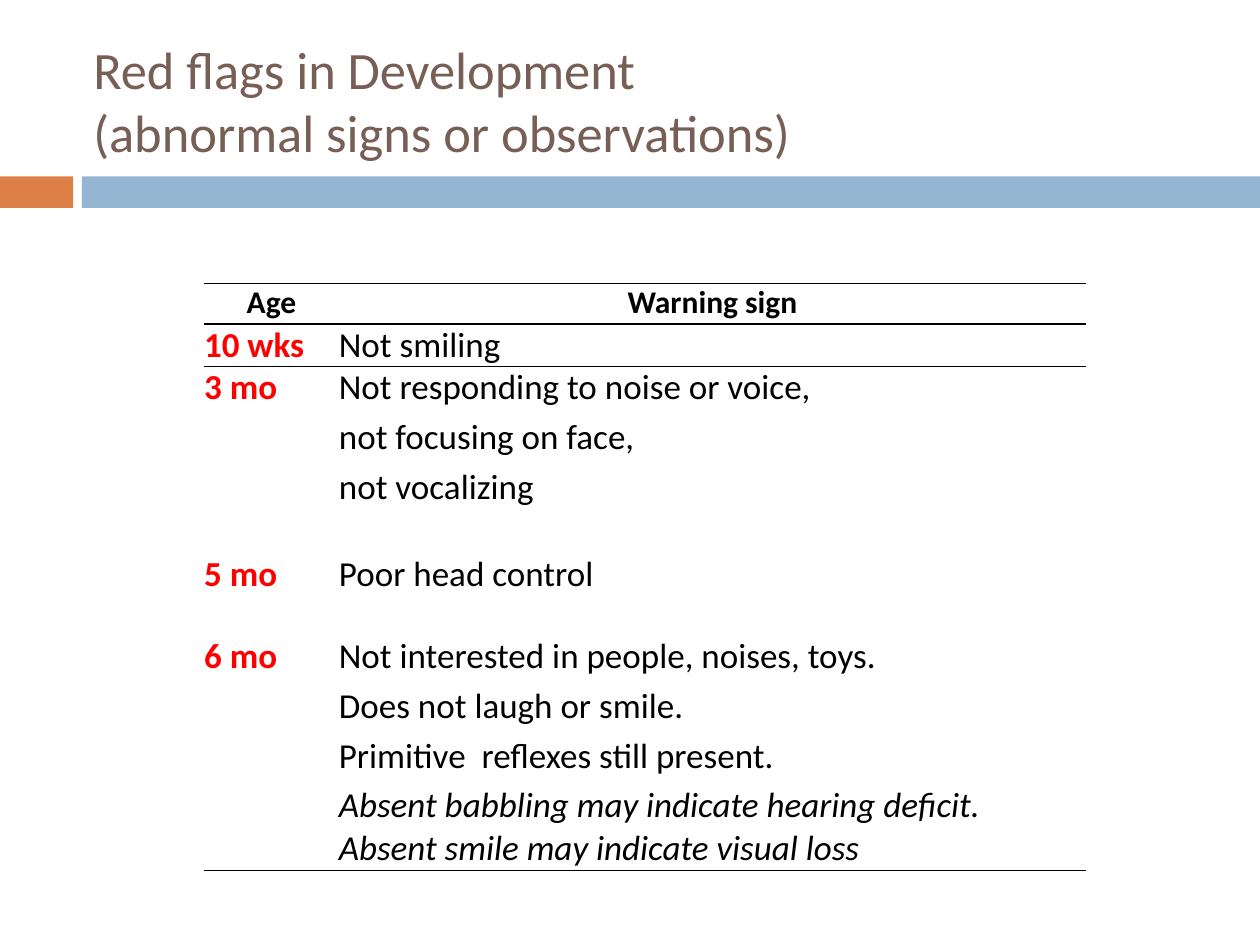
from dataclasses import dataclass

from lxml import etree
from pptx import Presentation
from pptx.dml.color import RGBColor
from pptx.enum.shapes import MSO_SHAPE
from pptx.enum.text import MSO_ANCHOR, PP_ALIGN
from pptx.oxml.ns import qn
from pptx.util import Inches, Pt

RECTANGLE = MSO_SHAPE.RECTANGLE
MIDDLE = MSO_ANCHOR.MIDDLE
CENTER, LEFT = PP_ALIGN.CENTER, PP_ALIGN.LEFT

FONT = "Calibri"
BLACK, RED, BROWN = "000000", "FF0000", "775F55"
NO_GRID_STYLE = "{2D5ABB26-0587-4C30-8999-92F81FD0307C}"


@dataclass
class Band:
    left: float
    width: float
    color: str


@dataclass
class Milestone:
    age: str
    signs: list[str]
    height: float
    note: str = ""


BANDS = [Band(0, 0.58, "DD8047"), Band(0.65, 9.35, "94B6D2")]
HEADINGS = ["Age", "Warning sign"]
HEADER_HEIGHT = 0.32
COLUMN_WIDTHS = [1.07, 5.93]
MILESTONES = [
    Milestone("10 wks", ["Not smiling"], 0.34),
    Milestone("3 mo", ["Not responding to noise or voice,", "not focusing on face,",
                       "not vocalizing"], 1.48),
    Milestone("5 mo", ["Poor head control"], 0.65),
    Milestone("6 mo", ["Not interested in people, noises, toys.",
                       "Does not laugh or smile.",
                       "Primitive  reflexes still present."], 1.87,
              "Absent babbling may indicate hearing deficit. "
              "Absent smile may indicate visual loss"),
]


def rgb(color: str) -> RGBColor:
    return RGBColor.from_string(color)


def style_font(para, size: float, color: str, bold=False, italic=False) -> None:
    font = para.font
    font.name, font.size = FONT, Pt(size)
    font.bold, font.italic = bold, italic
    font.color.rgb = rgb(color)


def draw_band(page, band: Band) -> None:
    bar = page.shapes.add_shape(RECTANGLE, Inches(band.left), Inches(1.4),
                                Inches(band.width), Inches(0.25))
    bar.shadow.inherit = False
    bar.fill.solid()
    bar.fill.fore_color.rgb = rgb(band.color)
    bar.line.fill.background()


def draw_title(page) -> None:
    box = page.shapes.add_textbox(Inches(0.67), Inches(0.25), Inches(8.92), Inches(1.08))
    frame = box.text_frame
    frame.word_wrap = True
    frame.vertical_anchor = MIDDLE
    frame.margin_left = frame.margin_right = Inches(0.07)
    frame.margin_top = frame.margin_bottom = Inches(0.04)
    para = frame.paragraphs[0]
    para.text = "Red flags in Development\v(abnormal signs or observations)"
    style_font(para, 30, BROWN)


def add_rule(cell, edge: str) -> None:
    """Draw a black line on one edge of a cell: lnT or lnB."""
    line = etree.SubElement(cell._tc.get_or_add_tcPr(), qn(f"a:{edge}"), w=str(Pt(1)))
    fill = etree.SubElement(line, qn("a:solidFill"))
    etree.SubElement(fill, qn("a:srgbClr"), val=BLACK)


def fill_cell(cell, lines: list[str], size: float, color: str, bold=False,
              align=LEFT, note="", rules=()) -> None:
    cell.margin_left = cell.margin_right = cell.margin_top = cell.margin_bottom = 0
    for edge in rules:
        add_rule(cell, edge)
    cell.fill.background()
    frame = cell.text_frame
    texts = lines + [note] if note else lines
    for index, text in enumerate(texts):
        para = frame.add_paragraph() if index else frame.paragraphs[0]
        para.text = text
        para.alignment = align
        para.space_before = Pt(0.2 * size if index else 0)
        style_font(para, size, color, bold, italic=bool(note) and text == note)


def draw_table(page) -> None:
    heights = [HEADER_HEIGHT] + [milestone.height for milestone in MILESTONES]
    frame = page.shapes.add_table(len(heights), len(COLUMN_WIDTHS), Inches(1.62), Inches(2.25),
                                  Inches(sum(COLUMN_WIDTHS)), Inches(sum(heights)))
    table = frame.table
    table.first_row = table.horz_banding = False
    table._tbl.tblPr.find(qn("a:tableStyleId")).text = NO_GRID_STYLE
    for column, width in zip(table.columns, COLUMN_WIDTHS):
        column.width = Inches(width)
    for row, height in zip(table.rows, heights):
        row.height = Inches(height)

    for column, heading in enumerate(HEADINGS):
        fill_cell(table.cell(0, column), [heading], 18, BLACK, bold=True,
                  align=CENTER, rules=["lnT", "lnB"])
    for row, milestone in enumerate(MILESTONES, start=1):
        rules = ["lnT"] if row == 1 else ["lnB"] if row == len(MILESTONES) else []
        fill_cell(table.cell(row, 0), [milestone.age], 20, RED, bold=True, rules=rules)
        fill_cell(table.cell(row, 1), milestone.signs, 20, BLACK,
                  note=milestone.note, rules=rules)


def main() -> None:
    deck = Presentation()
    deck.slide_width, deck.slide_height = Inches(10), Inches(7.5)
    page = deck.slides.add_slide(deck.slide_layouts[6])
    for band in BANDS:
        draw_band(page, band)
    draw_title(page)
    draw_table(page)
    deck.save("out.pptx")


if __name__ == "__main__":
    main()
